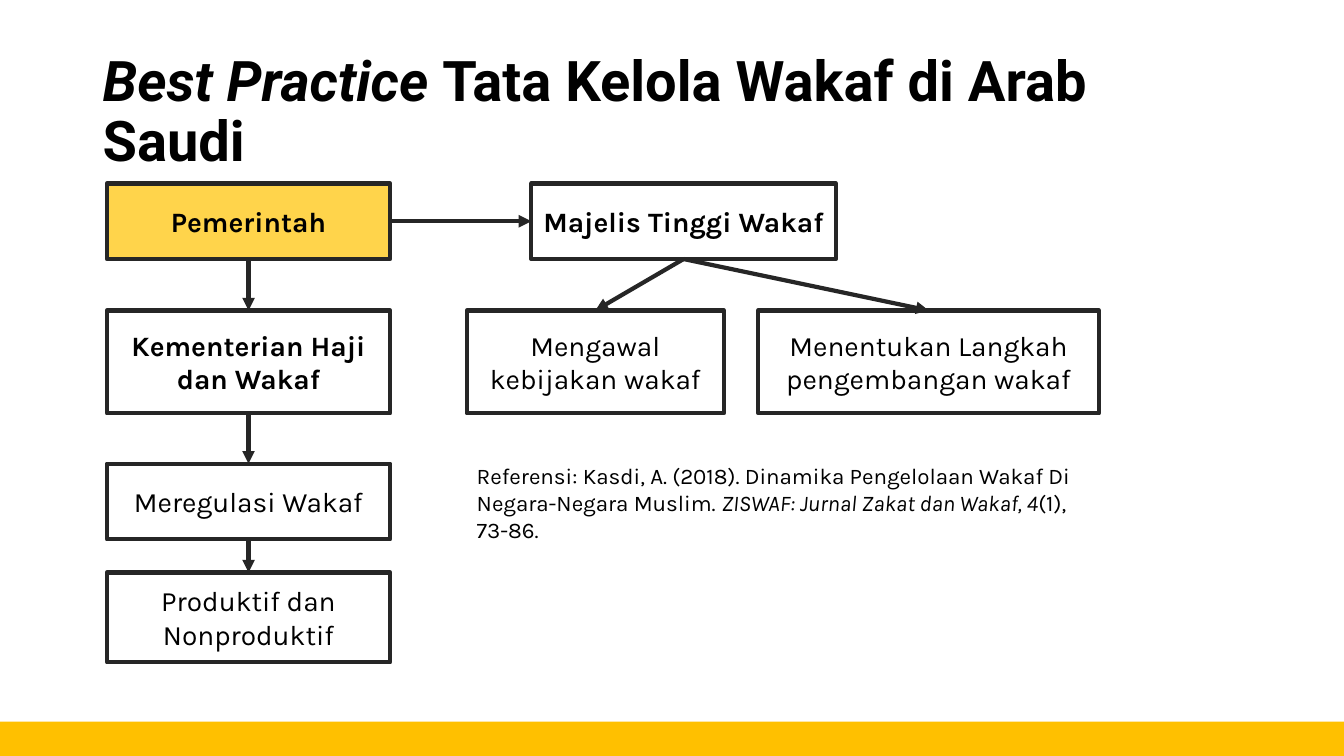
from lxml.etree import SubElement
from pptx import Presentation
from pptx.dml.color import RGBColor
from pptx.enum.shapes import MSO_CONNECTOR as LINE, MSO_SHAPE as SHAPE
from pptx.enum.text import MSO_ANCHOR as ANCHOR, PP_ALIGN as ALIGN
from pptx.oxml.ns import qn
from pptx.util import Inches, Pt

COLORS = {"black": "000000", "white": "FFFFFF", "outline": "262626",
          "highlight": "FFD44B", "footer": "FFC000"}
WIDTH, HEIGHT = 13.33, 7.5
TOP, LEFT, BOTTOM, RIGHT = range(4)

# Grid of the chart in inches: (left, width) and (top, height)
COLUMNS = {"government": (1.06, 2.81), "council": (5.27, 3.02),
           "policy": (4.63, 2.55), "development": (7.52, 3.38),
           "reference": (4.63, 6.28)}
ROWS = {"authority": (1.82, 0.75), "body": (3.08, 1.02),
        "regulation": (4.6, 0.75), "outcome": (5.68, 0.89),
        "reference": (4.54, 0.91)}

# name: (column, row, text, bold, fill)
BOXES = {
    "pemerintah": ("government", "authority", "Pemerintah", True, "highlight"),
    "kementerian": ("government", "body", "Kementerian Haji dan Wakaf", True, "white"),
    "regulasi": ("government", "regulation", "Meregulasi Wakaf", False, "white"),
    "produktif": ("government", "outcome", "Produktif dan Nonproduktif", False, "white"),
    "majelis": ("council", "authority", "Majelis Tinggi Wakaf", True, "white"),
    "kebijakan": ("policy", "body", "Mengawal kebijakan wakaf", False, "white"),
    "langkah": ("development", "body", "Menentukan Langkah pengembangan wakaf", False, "white"),
}
ARROWS = [
    ("pemerintah", BOTTOM, "kementerian", TOP),
    ("kementerian", BOTTOM, "regulasi", TOP),
    ("regulasi", BOTTOM, "produktif", TOP),
    ("pemerintah", RIGHT, "majelis", LEFT),
    ("majelis", BOTTOM, "kebijakan", TOP),
    ("majelis", BOTTOM, "langkah", TOP),
]


def color(name):
    return RGBColor.from_string(COLORS[name])


def cell(column, row):
    (left, width), (top, height) = COLUMNS[column], ROWS[row]
    return [Inches(v) for v in (left, top, width, height)]


def add_run(p, text, size, font="Karla", bold=False, italic=False):
    r = p.add_run()
    r.text = text
    f = r.font
    f.name, f.size, f.bold, f.italic = font, Pt(size), bold, italic
    f.color.rgb = color("black")


def add_filled(s, kind, area, fill):
    sp = s.shapes.add_shape(kind, *area)
    sp.shadow.inherit = False
    sp.fill.solid()
    sp.fill.fore_color.rgb = color(fill)
    return sp


def add_box(s, column, row, text, bold, fill):
    sp = add_filled(s, SHAPE.ROUNDED_RECTANGLE, cell(column, row), fill)
    sp.adjustments[0] = 0
    sp.line.color.rgb = color("outline")
    sp.line.width = Pt(3)
    tf = sp.text_frame
    tf.word_wrap = True
    tf.vertical_anchor = ANCHOR.MIDDLE
    p = tf.paragraphs[0]
    p.alignment = ALIGN.CENTER
    add_run(p, text, 20, bold=bold)
    return sp


def add_arrow(s, start, start_side, end, end_side):
    c = s.shapes.add_connector(LINE.STRAIGHT, 0, 0, 0, 0)
    c.begin_connect(start, start_side)
    c.end_connect(end, end_side)
    c.line.color.rgb = color("outline")
    c.line.width = Pt(3)
    SubElement(c.line._get_or_add_ln(), qn("a:tailEnd"), type="triangle")
    SubElement(c._element.spPr, qn("a:effectLst"))


def add_text(s, area, anchor=ANCHOR.TOP):
    """Add a wrapping text box and return its first paragraph."""
    tf = s.shapes.add_textbox(*area).text_frame
    tf.word_wrap = True
    tf.vertical_anchor = anchor
    return tf.paragraphs[0]


def add_title(s):
    area = [Inches(v) for v in (0.92, 0.4, 11.5, 1.45)]
    p = add_text(s, area, ANCHOR.MIDDLE)
    p.line_spacing = 0.9
    add_run(p, "Best Practice ", 40, "Roboto", bold=True, italic=True)
    add_run(p, "Tata Kelola Wakaf di Arab Saudi", 40, "Roboto", bold=True)


def add_reference(s):
    p = add_text(s, cell("reference", "reference"))
    add_run(p, "Referensi: Kasdi, A. (2018). Dinamika Pengelolaan Wakaf Di "
               "Negara-Negara Muslim. ", 16)
    add_run(p, "ZISWAF: Jurnal Zakat dan Wakaf, 4", 16, italic=True)
    add_run(p, "(1), 73-86.", 16)


def add_footer(s):
    band = 0.34
    area = [Inches(v) for v in (0, HEIGHT - band, WIDTH, band)]
    add_filled(s, SHAPE.RECTANGLE, area, "footer").line.fill.background()


def main():
    prs = Presentation()
    prs.slide_width, prs.slide_height = Inches(WIDTH), Inches(HEIGHT)
    s = prs.slides.add_slide(prs.slide_layouts[6])
    add_footer(s)
    add_title(s)
    boxes = {name: add_box(s, *box) for name, box in BOXES.items()}
    for start, start_side, end, end_side in ARROWS:
        add_arrow(s, boxes[start], start_side, boxes[end], end_side)
    add_reference(s)
    prs.save("out.pptx")


if __name__ == "__main__":
    main()
